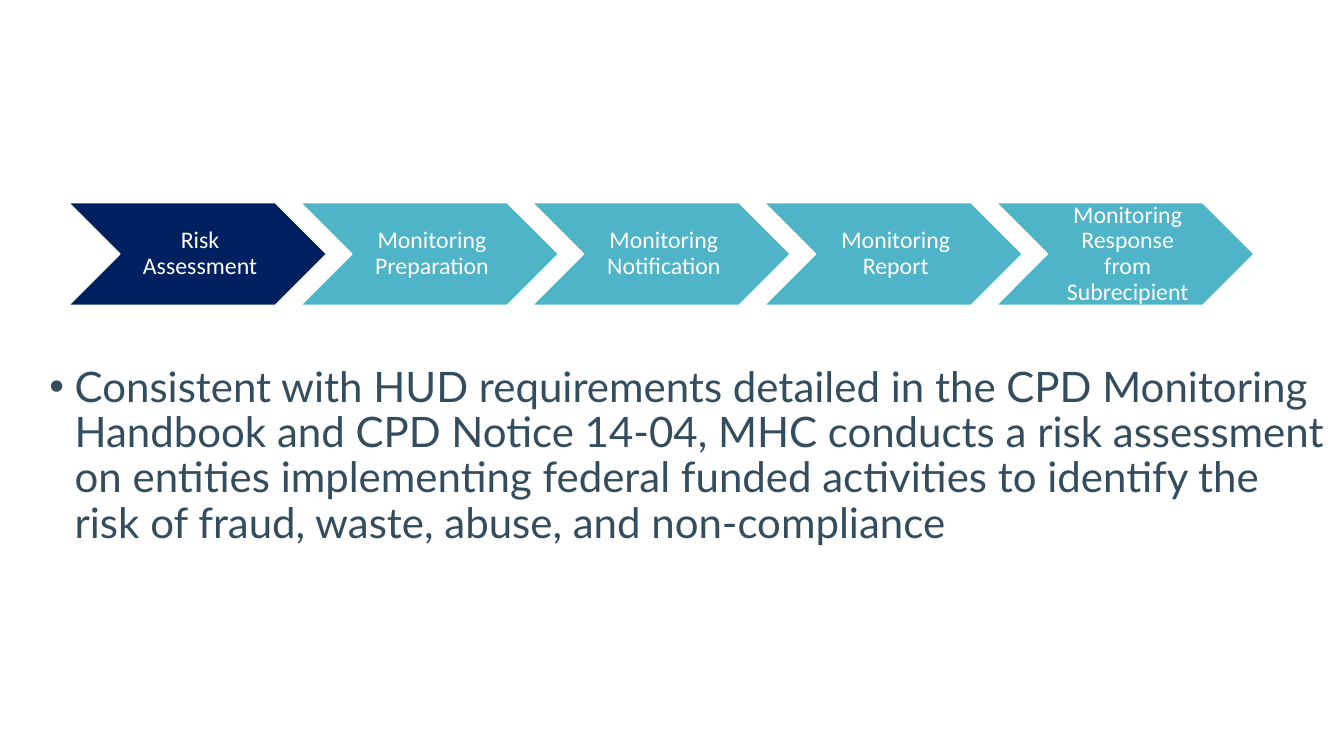
from pptx import Presentation
from pptx.dml.color import RGBColor
from pptx.enum.shapes import MSO_SHAPE
from pptx.enum.text import MSO_ANCHOR, MSO_AUTO_SIZE, PP_ALIGN
from pptx.util import Inches, Pt

CHEVRON = MSO_SHAPE.CHEVRON
MIDDLE, TOP = MSO_ANCHOR.MIDDLE, MSO_ANCHOR.TOP
CENTER, LEFT = PP_ALIGN.CENTER, PP_ALIGN.LEFT
NO_AUTOFIT = MSO_AUTO_SIZE.NONE

STEPS = [
    "Risk Assessment",
    "Monitoring Preparation",
    "Monitoring Notification",
    "Monitoring Report",
    "Monitoring Response from Subrecipient",
]
CURRENT_STEP = 0
EXPLANATION = (
    "Consistent with HUD requirements detailed in the CPD Monitoring Handbook "
    "and CPD Notice 14-04, MHC conducts a risk assessment on entities "
    "implementing federal funded activities to identify the risk of fraud, "
    "waste, abuse, and non-compliance"
)

NAVY, TEAL, WHITE, SLATE = "002060", "50B4C8", "FFFFFF", "334D5F"
STEP_LEFT, STEP_TOP, STEP_WIDTH, STEP_HEIGHT = 0.68, 2.01, 2.56, 1.02
STEP_PITCH = 2.3


def color(hex_string):
    return RGBColor.from_string(hex_string)


def write(frame, text, font, size, hex_string, align, anchor, margins):
    """Fill the frame with one paragraph; margins are left, top, right, bottom."""
    frame.text = text
    frame.word_wrap = True
    frame.auto_size = NO_AUTOFIT
    frame.vertical_anchor = anchor
    (frame.margin_left, frame.margin_top,
     frame.margin_right, frame.margin_bottom) = map(Inches, margins)
    paragraph = frame.paragraphs[0]
    paragraph.alignment = align
    paragraph.line_spacing = 0.9
    paragraph.space_before = Pt(0)
    run_font = paragraph.runs[0].font
    run_font.name = font
    run_font.size = Pt(size)
    run_font.color.rgb = color(hex_string)
    return paragraph


def add_step(slide, index, label):
    step = slide.shapes.add_shape(
        CHEVRON, Inches(STEP_LEFT + index * STEP_PITCH), Inches(STEP_TOP),
        Inches(STEP_WIDTH), Inches(STEP_HEIGHT))
    step.shadow.inherit = False
    step.fill.solid()
    step.fill.fore_color.rgb = color(NAVY if index == CURRENT_STEP else TEAL)
    step.line.color.rgb = color(WHITE)
    step.line.width = Pt(1)
    write(step.text_frame, label, "Calibri", 17, WHITE, CENTER, MIDDLE,
          (0.09, 0.02, 0.04, 0.02))


def add_explanation(slide):
    body = slide.placeholders[1]
    body.left, body.top = Inches(0.39), Inches(3.13)
    body.width, body.height = Inches(12.94), Inches(4.12)
    paragraph = write(body.text_frame, EXPLANATION, "Lato", 30, SLATE, LEFT, TOP,
                      (0.1, 0.5, 0.1, 0.05))
    hanging = paragraph._p.get_or_add_pPr()
    hanging.set("marL", str(Inches(0.25)))
    hanging.set("indent", str(-Inches(0.25)))


def main():
    deck = Presentation()
    deck.slide_width, deck.slide_height = Inches(13.33), Inches(7.5)
    slide = deck.slides.add_slide(deck.slide_layouts[1])
    title = slide.shapes.title.element
    title.getparent().remove(title)
    add_explanation(slide)
    for index, label in enumerate(STEPS):
        add_step(slide, index, label)
    deck.save("out.pptx")


if __name__ == "__main__":
    main()
